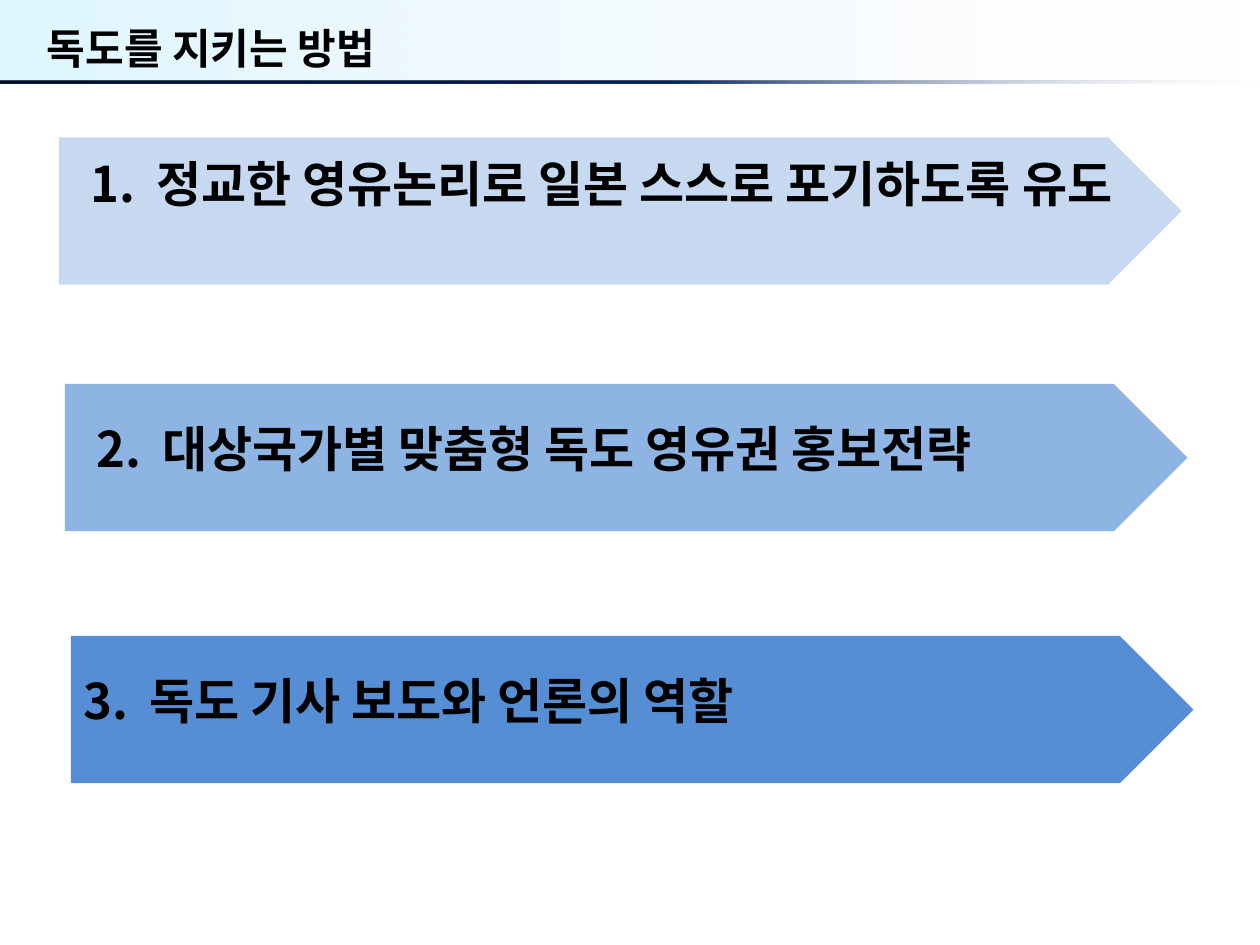
import pptx
import pptx.dml.color
import pptx.enum.shapes
import pptx.enum.text
import pptx.oxml
import pptx.oxml.ns
import pptx.util
from pptx.util import Cm

RGB = pptx.dml.color.RGBColor
SHAPE = pptx.enum.shapes.MSO_SHAPE
FONT = "Noto Sans CJK KR"
BLACK = RGB(0x00, 0x00, 0x00)
SKY = RGB(0xAB, 0xE9, 0xFF)
MIST = RGB(0xE1, 0xE8, 0xF5)
MIDNIGHT = RGB(0x00, 0x0E, 0x2A)
NAVY = RGB(0x00, 0x20, 0x60)
PALE_BLUE = RGB(0xC6, 0xD9, 0xF1)
SOFT_BLUE = RGB(0x8E, 0xB4, 0xE3)
STRONG_BLUE = RGB(0x55, 0x8E, 0xD5)

ARROW_W, ARROW_H = Cm(22.63), Cm(2.97)
NUMBER_TAB = Cm(1.33)
# arrow left, top, colour; text offset x, y, width, height; wording
METHODS = [
    (1.19, 2.77, PALE_BLUE, 0.38, 0.2, 21.23, 2.64,
     "1.\t정교한 영유논리로 일본 스스로 포기하도록 유도"),
    (1.31, 7.74, SOFT_BLUE, 0.38, 0.58, 20.83, 1.45,
     "2.\t대상국가별 맞춤형 독도 영유권 홍보전략"),
    (1.43, 12.82, STRONG_BLUE, 0, 0.58, 20.83, 1.45,
     "3.\t독도 기사 보도와 언론의 역할"),
]


def style_paragraph(p, size):
    p.alignment = pptx.enum.text.PP_ALIGN.LEFT
    p.font.size = pptx.util.Pt(size)
    p.font.bold = True
    p.font.color.rgb = BLACK
    p.font.name = FONT
    ea = p.font._element.makeelement(pptx.oxml.ns.qn("a:ea"), {"typeface": FONT})
    p.font._element.append(ea)


def add_plain_shape(s, kind, x, y, w, h):
    sp = s.shapes.add_shape(kind, x, y, w, h)
    sp.shadow.inherit = False
    sp.line.fill.background()
    return sp


def fill_gradient(sp, stops):
    """Fill left to right with stops of (position %, colour, opacity %)."""
    gs = "".join(
        f'<a:gs pos="{pos * 1000}"><a:srgbClr val="{color}">'
        f'<a:alpha val="{opacity * 1000}"/></a:srgbClr></a:gs>'
        for pos, color, opacity in stops)
    sp.fill.gradient()
    grad = sp._element.spPr.find(pptx.oxml.ns.qn("a:gradFill"))
    new = pptx.oxml.parse_xml(
        f'<a:gradFill {pptx.oxml.ns.nsdecls("a")} rotWithShape="1">'
        f'<a:gsLst>{gs}</a:gsLst><a:lin ang="0" scaled="0"/></a:gradFill>')
    grad.getparent().replace(grad, new)


def add_header(s, x, y, w, h, text):
    band = add_plain_shape(s, SHAPE.RECTANGLE, x, y, w, h)
    fill_gradient(band, [(0, SKY, 40), (100, MIST, 0)])
    rule = add_plain_shape(s, SHAPE.RECTANGLE, x, y + h - Cm(0.03), w, Cm(0.06))
    fill_gradient(rule, [(0, MIDNIGHT, 100), (53, NAVY, 100), (100, MIST, 0)])

    title = s.shapes.title
    s.shapes.element.append(title._element)  # bring in front of the band
    title.left, title.top = x + Cm(0.69), y + Cm(0.33)
    title.width, title.height = Cm(22.86), Cm(1.27)
    tf = title.text_frame
    tf.text = text
    tf.vertical_anchor = pptx.enum.text.MSO_ANCHOR.MIDDLE
    style_paragraph(tf.paragraphs[0], 24)


def add_method(s, x, y, color, dx, dy, w, h, text):
    arrow = add_plain_shape(s, SHAPE.PENTAGON, x, y, ARROW_W, ARROW_H)
    arrow.fill.solid()
    arrow.fill.fore_color.rgb = color

    tf = s.shapes.add_textbox(x + dx, y + dy, w, h).text_frame
    tf.word_wrap = True
    p = tf.paragraphs[0]
    p.text = text
    p._p.get_or_add_pPr().append(pptx.oxml.parse_xml(
        f'<a:tabLst {pptx.oxml.ns.nsdecls("a")}>'
        f'<a:tab pos="{NUMBER_TAB}" algn="l"/></a:tabLst>'))
    style_paragraph(p, 28)


def main():
    prs = pptx.Presentation()
    prs.slide_width, prs.slide_height = Cm(25.4), Cm(19.05)
    s = prs.slides.add_slide(prs.slide_layouts[5])
    add_header(s, 0, 0, prs.slide_width, Cm(1.65), "독도를 지키는 방법")
    for x, y, color, dx, dy, w, h, text in METHODS:
        add_method(s, Cm(x), Cm(y), color, Cm(dx), Cm(dy), Cm(w), Cm(h), text)
    prs.save("out.pptx")


if __name__ == "__main__":
    main()
